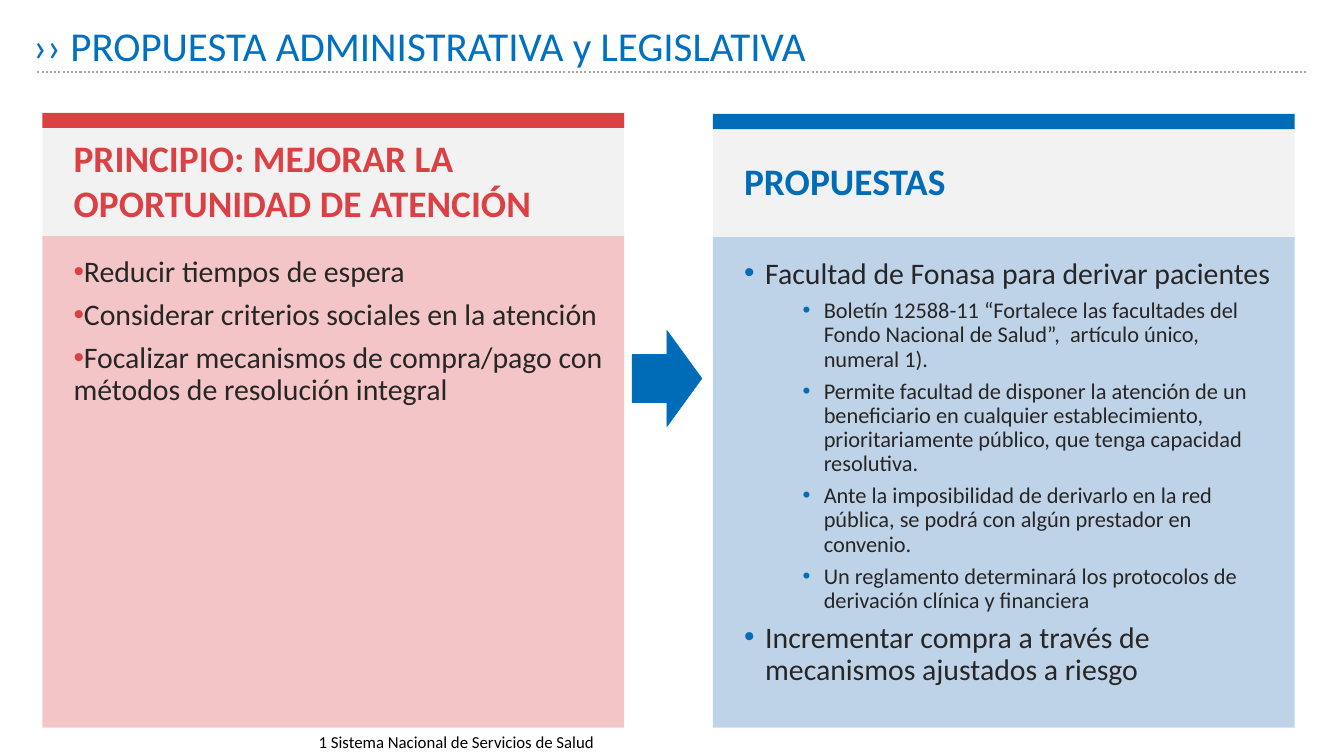
import pptx
import pptx.util
import pptx.dml.color
import pptx.enum.dml
import pptx.enum.shapes
import pptx.enum.text
import pptx.oxml
import pptx.oxml.ns

COLORS = {
    "title": "0070C0", "rule": "A6A6A6", "header": "F2F2F2", "text": "262626",
    "red": "DB4144", "blue": "006CB7", "pale_blue": "BFD3E8",
    "blue_bullet": "066CB3", "black": "000000",
}
WIDTH, HEIGHT = 13.33, 7.5
PANEL_WIDTH, PANEL_BOTTOM = 43.29, 96.27
BAR_HEIGHT, HEADER_TOP, BODY_DROP = 2, 15.47, 16.3
BULLET_HANG = 0.21
ITEM_SIZE, DETAIL_SIZE = 21.3, 16
DETAIL_INDENT = 0.79
RECTANGLE = pptx.enum.shapes.MSO_SHAPE.RECTANGLE
MIDDLE = pptx.enum.text.MSO_ANCHOR.MIDDLE
TOP = pptx.enum.text.MSO_ANCHOR.TOP

PRINCIPLES = [
    (text, ITEM_SIZE, 0) for text in (
        "Reducir tiempos de espera",
        "Considerar criterios sociales en la atención",
        "Focalizar mecanismos de compra/pago con métodos de resolución integral",
    )
]
DETAILS = [
    (text, DETAIL_SIZE, DETAIL_INDENT) for text in (
        "Boletín 12588-11 “Fortalece las facultades del Fondo Nacional de Salud”,  artículo único, numeral 1).",
        "Permite facultad de disponer la atención de un beneficiario en cualquier establecimiento, "
        "prioritariamente público, que tenga capacidad resolutiva.",
        "Ante la imposibilidad de derivarlo en la red pública, se podrá con algún prestador en convenio.",
        "Un reglamento determinará los protocolos de derivación clínica y financiera",
    )
]
PROPOSALS = [
    ("Facultad de Fonasa para derivar pacientes", ITEM_SIZE, BULLET_HANG),
    *DETAILS,
    ("Incrementar compra a través de mecanismos ajustados a riesgo", ITEM_SIZE, BULLET_HANG),
]


def color(name):
    return pptx.dml.color.RGBColor.from_string(COLORS[name])


def across(percent):
    return pptx.util.Inches(WIDTH * percent / 100)


def down(percent):
    return pptx.util.Inches(HEIGHT * percent / 100)


def box(left, top, width, height):
    """Turn percentages of the slide into a position and size."""
    return across(left), down(top), across(width), down(height)


def set_attributes(target, values):
    for name, value in values.items():
        setattr(target, name, value)


def add_child(parent, tag, **attributes):
    child = pptx.oxml.parse_xml(f"<{tag} {pptx.oxml.ns.nsdecls('a')}/>")
    for name, value in attributes.items():
        child.set(name, str(value))
    parent.append(child)
    return child


def format_frame(frame, anchor, insets):
    sides = ("margin_left", "margin_top", "margin_right", "margin_bottom")
    margins = {side: pptx.util.Inches(inset) for side, inset in zip(sides, insets)}
    set_attributes(frame, {"word_wrap": True, "vertical_anchor": anchor, **margins})


def write(paragraph, text, size, color_name, bold=False):
    run = paragraph.add_run()
    run.text = text
    paragraph.alignment = pptx.enum.text.PP_ALIGN.LEFT
    set_attributes(run.font, {"name": "Calibri", "size": pptx.util.Pt(size), "bold": bold})
    run.font.color.rgb = color(color_name)


def add_block(shapes, kind, place, fill, line=None):
    shape = shapes.add_shape(kind, *place)
    shape.shadow.inherit = False
    shape.fill.solid()
    shape.fill.fore_color.rgb = color(fill)
    if line:
        shape.line.color.rgb = color(line)
        shape.line.width = pptx.util.Pt(0.5)
    else:
        shape.line.fill.background()
    return shape


def make_translucent(shape, percent):
    fill_color = shape.fill._xPr.find(".//" + pptx.oxml.ns.qn("a:srgbClr"))
    add_child(fill_color, "a:alpha", val=percent * 1000)


def add_bullets(frame, items, bullet_color):
    for index, (text, size, indent) in enumerate(items):
        paragraph = frame.add_paragraph() if index else frame.paragraphs[0]
        write(paragraph, text, size, "text")
        set_attributes(paragraph, {
            "line_spacing": 0.9,
            "space_before": pptx.util.Pt(size * 0.2),
            "space_after": pptx.util.Pt(size * 0.15),
        })
        properties = paragraph._p.get_or_add_pPr()
        properties.set("marL", str(pptx.util.Inches(indent)))
        properties.set("indent", str(-pptx.util.Inches(BULLET_HANG)))
        bullet = add_child(properties, "a:buClr")
        add_child(bullet, "a:srgbClr", val=COLORS[bullet_color])
        add_child(properties, "a:buFont", typeface="Arial")
        add_child(properties, "a:buChar", char="•")


def add_panel(slide, left, top, heading, items, accent, body_fill, bullet_color):
    """Group a heading, a bulleted body and a coloured bar; return the body."""
    shapes = slide.shapes.add_group_shape().shapes
    body_top = top + BODY_DROP
    header = add_block(shapes, RECTANGLE,
                       box(left, HEADER_TOP, PANEL_WIDTH, body_top - HEADER_TOP), "header")
    format_frame(header.text_frame, MIDDLE, (0.31, 0.16, 0.18, 0.09))
    paragraph = header.text_frame.paragraphs[0]
    write(paragraph, heading, 26.7, accent, bold=True)
    paragraph.space_before = pptx.util.Pt(5.3)

    body = add_block(shapes, RECTANGLE,
                     box(left, body_top, PANEL_WIDTH, PANEL_BOTTOM - body_top), body_fill)
    format_frame(body.text_frame, TOP, (0.31, 0.21, 0.21, 0.16))
    add_bullets(body.text_frame, items, bullet_color)
    add_block(shapes, RECTANGLE, box(left, top, PANEL_WIDTH, BAR_HEIGHT), accent)
    return body


def add_rule(slide, left, right, top):
    rule = slide.shapes.add_connector(
        pptx.enum.shapes.MSO_CONNECTOR.STRAIGHT,
        across(left), down(top), across(right), down(top))
    rule.line.color.rgb = color("rule")
    set_attributes(rule.line, {
        "width": pptx.util.Pt(1.5),
        "dash_style": pptx.enum.dml.MSO_LINE.ROUND_DOT,
    })
    add_child(rule._element.spPr, "a:effectLst")


def add_title(slide, text):
    title = slide.shapes.title
    set_attributes(title, dict(zip(("left", "top", "width", "height"),
                                   box(1.73, 0.53, 95.65, 10.8))))
    format_frame(title.text_frame, MIDDLE, (0.1, 0.05, 0.1, 0.05))
    title.text_frame.auto_size = pptx.enum.text.MSO_AUTO_SIZE.NONE
    write(title.text_frame.paragraphs[0], text, 29.3, "title")


def add_footnote(slide, text):
    frame = slide.shapes.add_textbox(*box(21.76, 95.47, 58.36, 6.53)).text_frame
    format_frame(frame, TOP, (0.26, 0.14, 0.26, 0.14))
    write(frame.paragraphs[0], text, 12, "black")


def main():
    presentation = pptx.Presentation()
    presentation.slide_width = pptx.util.Inches(WIDTH)
    presentation.slide_height = pptx.util.Inches(HEIGHT)
    slide = presentation.slides.add_slide(presentation.slide_layouts.get_by_name("Title Only"))

    add_rule(slide, 2.78, 97.3, 9.47)
    add_title(slide, "›› PROPUESTA ADMINISTRATIVA y LEGISLATIVA")
    principles = add_panel(slide, 3.15, 14.93, "PRINCIPIO: MEJORAR LA OPORTUNIDAD DE ATENCIÓN",
                           PRINCIPLES, "red", "red", "red")
    make_translucent(principles, 30)
    add_panel(slide, 53.04, 15.07, "PROPUESTAS", PROPOSALS, "blue", "pale_blue", "blue_bullet")
    add_block(slide.shapes, pptx.enum.shapes.MSO_SHAPE.RIGHT_ARROW,
              box(47.04, 43.73, 5.18, 12.67), "blue", line="title")
    add_footnote(slide, "1 Sistema Nacional de Servicios de Salud")
    presentation.save("out.pptx")


if __name__ == "__main__":
    main()
